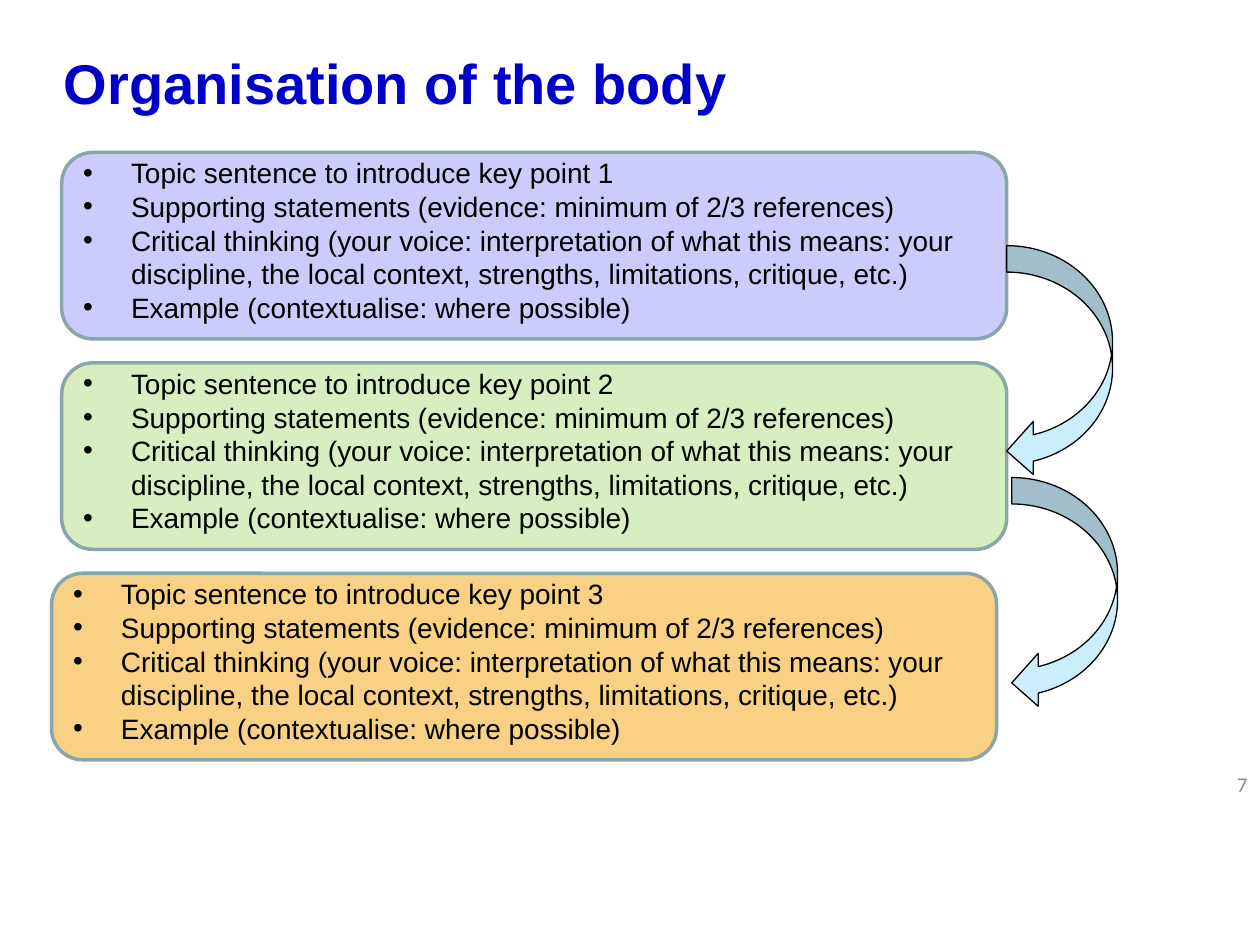
from lxml import etree
from pptx import Presentation
from pptx.dml.color import RGBColor
from pptx.enum import shapes, text
from pptx.oxml.ns import qn
from pptx.util import Inches, Pt

COLORS = {
    "title": "0000C8", "number": "898989", "body": "000000",
    "border": "8AA6A8", "arrow": "CBEEFD", "arrow_line": "000000",
}
TITLE_FONT = {"name": "Arial", "size": Pt(32), "bold": True}
BODY_FONT = {"name": "Arial", "size": Pt(16)}
NUMBER_FONT = {"name": "Calibri", "size": Pt(12)}

# Grid: three rows of boxes with a fixed pitch
TOP, PITCH, BOX_W, BOX_H = 1.21, 1.67, 7.5, 1.48
BOXES = [(0.49, "CCCCFC"), (0.49, "D8EEC0"), (0.41, "F8D184")]
ARROW_W, ARROW_H = 0.84, 1.84
ARROWS = [(7.99, 1.95), (8.03, 1.95 + ARROW_H)]

POINTS = [
    "Topic sentence to introduce key point {}",
    "Supporting statements (evidence: minimum of 2/3 references)",
    "Critical thinking (your voice: interpretation of what this means: your "
    "discipline, the local context, strengths, limitations, critique, etc.)",
    "Example (contextualise: where possible)",
]


def inches(box):
    return [Inches(v) for v in box]


def style(font, fmt, color):
    for key, value in fmt.items():
        setattr(font, key, value)
    font.color.rgb = RGBColor.from_string(COLORS[color])


def add_bullet(p, indent):
    pPr = p._p.get_or_add_pPr()
    pPr.set("marL", str(indent))
    pPr.set("indent", str(-indent))
    etree.SubElement(pPr, qn("a:buFont")).set("typeface", "Arial")
    etree.SubElement(pPr, qn("a:buChar")).set("char", "•")


def add_outlined(s, kind, box, fill, line, width):
    sp = s.shapes.add_shape(kind, *inches(box))
    sp.shadow.inherit = False
    sp.fill.solid()
    sp.fill.fore_color.rgb = RGBColor.from_string(fill)
    sp.line.color.rgb = RGBColor.from_string(COLORS[line])
    sp.line.width = Pt(width)
    return sp


def add_label(s, box, words, fmt, color, align):
    tf = s.shapes.add_textbox(*inches(box)).text_frame
    tf.word_wrap = True
    tf.vertical_anchor = text.MSO_ANCHOR.MIDDLE
    p = tf.paragraphs[0]
    p.alignment = align
    r = p.add_run()
    r.text = words
    style(r.font, fmt, color)


def add_point_box(s, box, number, fill):
    sp = add_outlined(s, shapes.MSO_SHAPE.ROUNDED_RECTANGLE, box, fill, "border", 2)
    tf = sp.text_frame
    tf.word_wrap = True
    tf.vertical_anchor = text.MSO_ANCHOR.MIDDLE
    tf.margin_top, tf.margin_bottom = 0, Inches(0.09)
    for i, point in enumerate(POINTS):
        p = tf.add_paragraph() if i else tf.paragraphs[0]
        p.alignment = text.PP_ALIGN.LEFT
        add_bullet(p, Inches(0.38))
        r = p.add_run()
        r.text = point.format(number)
        style(r.font, BODY_FONT, "body")


def main():
    prs = Presentation()
    prs.slide_width, prs.slide_height = Inches(10), Inches(7.5)
    s = prs.slides.add_slide(prs.slide_layouts[6])

    # Title and slide number
    add_label(s, (0.41, 0.3, 9.03, 0.71), "Organisation of the body",
              TITLE_FONT, "title", text.PP_ALIGN.LEFT)
    add_label(s, (7.67, 6.02, 2.33, 0.4), "7",
              NUMBER_FONT, "number", text.PP_ALIGN.RIGHT)

    # Key point boxes
    for row, (left, fill) in enumerate(BOXES):
        add_point_box(s, (left, TOP + row * PITCH, BOX_W, BOX_H), row + 1, fill)

    # Arrows from each box to the next
    for left, top in ARROWS:
        add_outlined(s, shapes.MSO_SHAPE.CURVED_LEFT_ARROW,
                     (left, top, ARROW_W, ARROW_H),
                     COLORS["arrow"], "arrow_line", 0.75)

    prs.save("out.pptx")


if __name__ == "__main__":
    main()
